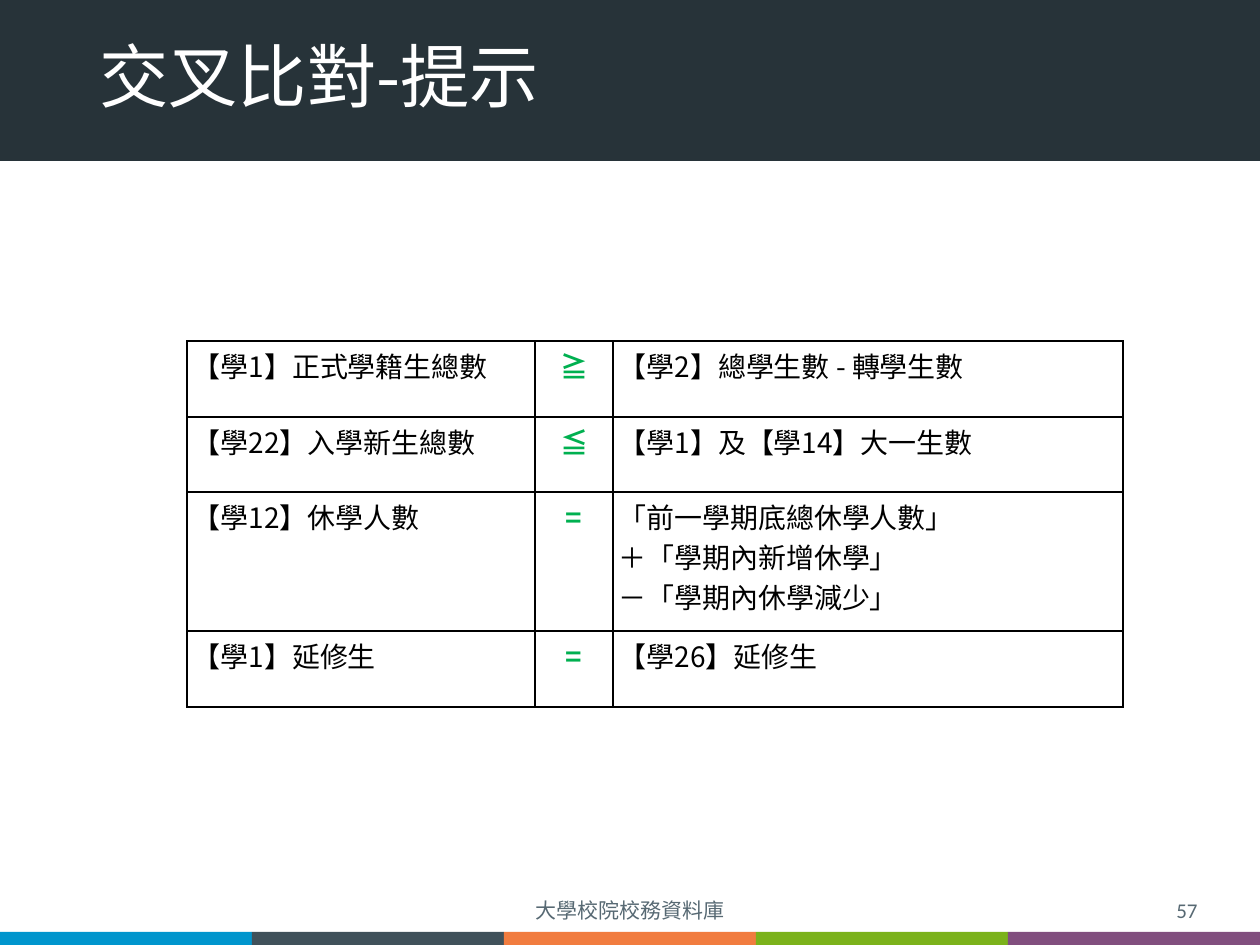
from lxml import etree
from pptx import Presentation
from pptx.dml.color import RGBColor
from pptx.enum.shapes import MSO_SHAPE
from pptx.enum.text import MSO_ANCHOR, PP_ALIGN
from pptx.oxml.ns import qn
from pptx.util import Emu, Pt

RECT = MSO_SHAPE.RECTANGLE
MIDDLE, TOP = MSO_ANCHOR.MIDDLE, MSO_ANCHOR.TOP
LEFT, CENTER, RIGHT = PP_ALIGN.LEFT, PP_ALIGN.CENTER, PP_ALIGN.RIGHT
HAN, LATIN = "Noto Sans CJK SC", "Calibri"
COLORS = {
    "header": "273339", "white": "FFFFFF", "black": "000000",
    "footer": "576973", "sign": "00B050",
    "blue": "0095CD", "slate": "40515A", "orange": "F17C3F",
    "green": "7BB21B", "purple": "814E7E",
}
STRIPES = ["blue", "slate", "orange", "green", "purple"]
COLS = [348, 78, 510]
ROWS = [76, 75, 139, 76]
RULES = [
    ("【學1】正式學籍生總數", "≧", ["【學2】總學生數 - 轉學生數"]),
    ("【學22】入學新生總數", "≦", ["【學1】及【學14】大一生數"]),
    ("【學12】休學人數", "=",
     ["「前一學期底總休學人數」", "＋「學期內新增休學」", "－「學期內休學減少」"]),
    ("【學1】延修生", "=", ["【學26】延修生"]),
]


def px(n):
    return Emu(round(n * 914400 / 126))


def rgb(name):
    return RGBColor.from_string(COLORS[name])


def write(para, text, size, color, font=HAN, bold=False, align=LEFT):
    para.alignment = align
    run = para.add_run()
    run.text = text
    run.font.size = Pt(size)
    run.font.name = font
    run.font.bold = bold
    run.font.color.rgb = rgb(color)
    # East Asian glyphs need their own typeface
    east = etree.SubElement(run._r.get_or_add_rPr(), qn("a:ea"))
    east.set("typeface", HAN)


def block(slide, box, color):
    shape = slide.shapes.add_shape(RECT, *map(px, box))
    shape.shadow.inherit = False
    shape.fill.solid()
    shape.fill.fore_color.rgb = rgb(color)
    shape.line.fill.background()


def label(slide, box, *args, **style):
    frame = slide.shapes.add_textbox(*map(px, box)).text_frame
    frame.word_wrap = True
    frame.vertical_anchor = MIDDLE
    para = frame.paragraphs[0]
    write(para, *args, **style)
    return para


def header(slide, box):
    x, y, w, h = box
    block(slide, box, "header")
    title = label(slide, (x + 87, y + 35, w - 174, 93),
                  "交叉比對-提示", 39.6, "white")
    title.line_spacing = 0.9


def footer(slide, box):
    x, y, w, h = box
    # Text line
    label(slide, (x + 417, y, 426, 39), "大學校院校務資料庫", 12, "footer",
          font=LATIN, align=CENTER)
    label(slide, (x + 926, y, 284, 39), "57", 12, "footer",
          font=LATIN, align=RIGHT)
    # Colour stripes
    step = w // len(STRIPES)
    for i, color in enumerate(STRIPES):
        block(slide, (x + i * step, y + h - 13, step, 13), color)


def border(cell):
    props = cell._tc.get_or_add_tcPr()
    for i, side in enumerate(("lnL", "lnR", "lnT", "lnB")):
        line = etree.Element(qn("a:" + side), w=str(Pt(1)))
        fill = etree.SubElement(line, qn("a:solidFill"))
        etree.SubElement(fill, qn("a:srgbClr"), val=COLORS["black"])
        props.insert(i, line)


def fill_cell(cell, lines, color="black", bold=False, align=LEFT):
    cell.margin_left = cell.margin_right = px(6)
    cell.margin_top = cell.margin_bottom = px(4)
    cell.vertical_anchor = TOP
    cell.fill.background()
    border(cell)
    frame = cell.text_frame
    for i, text in enumerate(lines):
        para = frame.add_paragraph() if i else frame.paragraphs[0]
        write(para, text, 16, color, bold=bold, align=align)


def rules(slide, x, y):
    frame = slide.shapes.add_table(len(ROWS), len(COLS), px(x), px(y),
                                   px(sum(COLS)), px(sum(ROWS)))
    table = frame.table
    table.first_row = table.horz_banding = False
    for col, width in zip(table.columns, COLS):
        col.width = px(width)
    for row, height, (left, sign, right) in zip(table.rows, ROWS, RULES):
        row.height = px(height)
        fill_cell(row.cells[0], [left])
        fill_cell(row.cells[1], [sign], "sign", True, CENTER)
        fill_cell(row.cells[2], right)


def main():
    deck = Presentation()
    deck.slide_width, deck.slide_height = px(1260), px(945)
    slide = deck.slides.add_slide(deck.slide_layouts[6])
    header(slide, (0, -1, 1260, 162))
    rules(slide, 187, 341)
    footer(slide, (0, 891, 1260, 54))
    deck.save("out.pptx")


if __name__ == "__main__":
    main()
